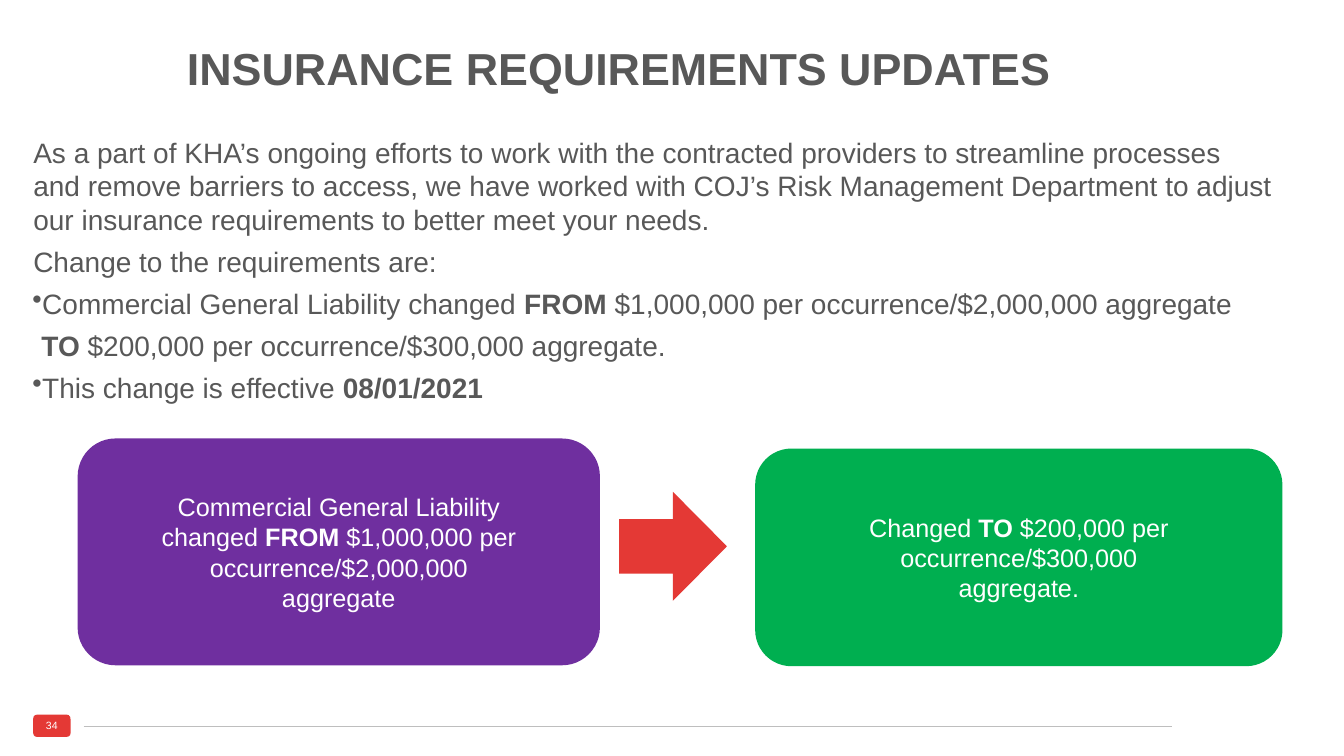
"""Build the insurance requirements update slide."""
from dataclasses import dataclass

import pptx
import pptx.dml.color
import pptx.enum.shapes
import pptx.enum.text
import pptx.oxml
import pptx.oxml.ns
import pptx.util

PX = 9144
SHAPE = pptx.enum.shapes.MSO_SHAPE
ALIGN = pptx.enum.text.PP_ALIGN
ANCHOR = pptx.enum.text.MSO_ANCHOR


@dataclass(frozen=True)
class Theme:
    """Colours, font and type sizes of the slide."""
    font: str = "Arial"
    ink: str = "585858"
    white: str = "FFFFFF"
    red: str = "E43935"
    purple: str = "6F2F9F"
    green: str = "00AF50"
    rule: str = "BEBEBE"
    title: float = 32
    body: float = 20
    card: float = 18
    number: float = 7.5


@dataclass(frozen=True)
class Box:
    """Position and size in px."""
    left: int
    top: int
    width: int
    height: int

    def emu(self) -> tuple[int, ...]:
        """Return the box in EMU."""
        return tuple(v * PX for v in (self.left, self.top, self.width, self.height))


@dataclass(frozen=True)
class Span:
    """A run of text."""
    text: str
    bold: bool = False


@dataclass(frozen=True)
class Line:
    """A paragraph with its hanging indent and bullet."""
    spans: tuple[Span, ...]
    indent: int = 0
    bullet: bool = False


@dataclass(frozen=True)
class Style:
    """Type size, colour and alignment of a text."""
    size: float
    color: str
    align: ALIGN
    before: int = 0


@dataclass(frozen=True)
class Block:
    """A filled shape, with text if any."""
    box: Box
    kind: SHAPE
    fill: str
    inset: int = 0
    size: float = 0
    spans: tuple[Span, ...] = ()


THEME = Theme()
HANG = 9
LIMIT_FROM = (Span("FROM ", True), Span("$1,000,000 per occurrence/$2,000,000 aggregate"))
LIMIT_TO = (Span("TO ", True), Span("$200,000 per occurrence/$300,000 aggregate."))

TITLE = (Line((Span("INSURANCE REQUIREMENTS UPDATES", True),)),)
BODY = (
    Line((Span(
        "As a part of KHA’s ongoing efforts to work with the contracted providers to "
        "streamline processes and remove barriers to access, we have worked with COJ’s "
        "Risk Management Department to adjust our insurance requirements to better "
        "meet your needs."),), 1),
    Line((Span("Change to the requirements are:"),), 1),
    Line((Span("Commercial General Liability changed "), *LIMIT_FROM), HANG, True),
    Line(LIMIT_TO, HANG),
    Line((Span("This change is effective "), Span("08/01/2021", True)), HANG, True),
)
BLOCKS = (
    Block(Box(33, 709, 37, 22), SHAPE.ROUNDED_RECTANGLE, THEME.red, 0,
          THEME.number, (Span("34"),)),
    Block(Box(77, 435, 518, 225), SHAPE.ROUNDED_RECTANGLE, THEME.purple, 68, THEME.card,
          (Span("Commercial General Liability changed "), *LIMIT_FROM)),
    Block(Box(749, 445, 523, 216), SHAPE.ROUNDED_RECTANGLE, THEME.green, 77, THEME.card,
          (Span("Changed "), *LIMIT_TO)),
    Block(Box(614, 488, 107, 108), SHAPE.RIGHT_ARROW, THEME.red),
)


def rgb(color: str) -> pptx.dml.color.RGBColor:
    """Turn a hex string into a colour."""
    return pptx.dml.color.RGBColor.from_string(color)


def write(frame, lines: tuple[Line, ...], style: Style, inset: int = 0, top: int = 0) -> None:
    """Fill a text frame paragraph by paragraph and run by run."""
    frame.word_wrap = True
    frame.margin_left = frame.margin_right = inset * PX
    frame.margin_top, frame.margin_bottom = top * PX, 0
    for index, line in enumerate(lines):
        paragraph = frame.add_paragraph() if index else frame.paragraphs[0]
        paragraph.alignment = style.align
        paragraph.space_before = pptx.util.Pt(style.before if index else 0)
        properties = paragraph._p.get_or_add_pPr()
        properties.set("marL", str(line.indent * PX))
        properties.set("indent", str(-HANG * PX if line.bullet else 0))
        if line.bullet:
            bullet = pptx.oxml.parse_xml(
                f'<a:buChar {pptx.oxml.ns.nsdecls("a")} char="•"/>')
            properties.append(bullet)
        for span in line.spans:
            run = paragraph.add_run()
            run.text = span.text
            run.font.name = THEME.font
            run.font.size = pptx.util.Pt(style.size)
            run.font.bold = span.bold
            run.font.color.rgb = rgb(style.color)


def add_text(slide, box: Box, lines: tuple[Line, ...], style: Style) -> None:
    """Add a text box."""
    write(slide.shapes.add_textbox(*box.emu()).text_frame, lines, style, top=3)


def add_block(slide, block: Block) -> None:
    """Add a filled shape with centred text."""
    shape = slide.shapes.add_shape(block.kind, *block.box.emu())
    shape.shadow.inherit = False
    shape.fill.solid()
    shape.fill.fore_color.rgb = rgb(block.fill)
    shape.line.fill.background()
    if block.spans:
        shape.text_frame.vertical_anchor = ANCHOR.MIDDLE
        style = Style(block.size, THEME.white, ALIGN.CENTER)
        write(shape.text_frame, (Line(block.spans),), style, block.inset)


def add_rule(slide, left: int, right: int, top: int) -> None:
    """Add the thin footer line."""
    rule = slide.shapes.add_connector(
        pptx.enum.shapes.MSO_CONNECTOR.STRAIGHT, left * PX, top * PX, right * PX, top * PX)
    rule.line.color.rgb = rgb(THEME.rule)
    rule.line.width = pptx.util.Pt(0.5)
    rule._element.spPr.append(
        pptx.oxml.parse_xml(f'<a:effectLst {pptx.oxml.ns.nsdecls("a")}/>'))


def main() -> None:
    """Build and save the slide."""
    deck = pptx.Presentation()
    deck.slide_width, deck.slide_height = 1333 * PX, 750 * PX
    slide = deck.slides.add_slide(deck.slide_layouts[6])
    add_rule(slide, 83, 1162, 721)
    add_text(slide, Box(174, 37, 880, 57), TITLE,
             Style(THEME.title, THEME.ink, ALIGN.CENTER))
    add_text(slide, Box(32, 131, 1232, 270), BODY,
             Style(THEME.body, THEME.ink, ALIGN.LEFT, 6))
    for block in BLOCKS:
        add_block(slide, block)
    deck.save("out.pptx")


if __name__ == "__main__":
    main()
